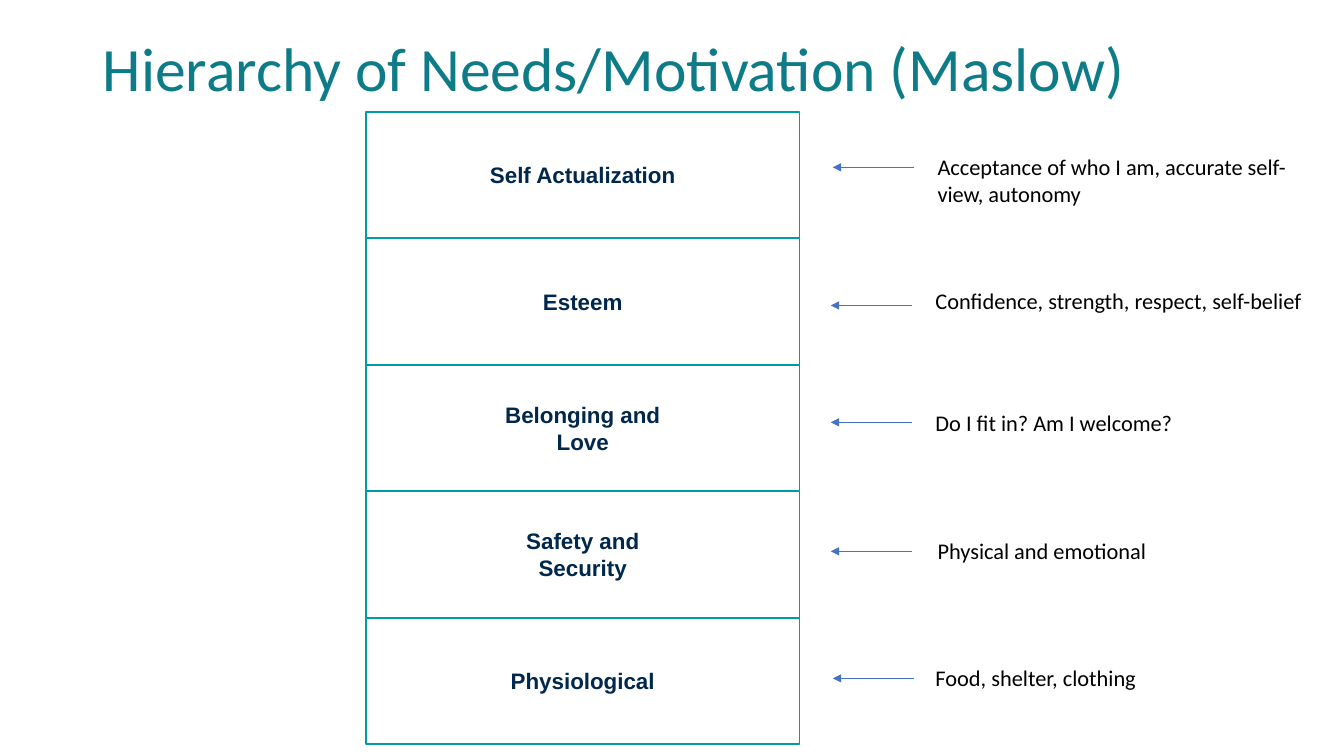
from dataclasses import dataclass

from lxml.etree import SubElement
from pptx import Presentation
from pptx.dml.color import RGBColor as Color
from pptx.enum.shapes import MSO_CONNECTOR as Connector, MSO_SHAPE as Shape
from pptx.enum.text import MSO_ANCHOR as Anchor, MSO_AUTO_SIZE as AutoSize, PP_ALIGN as Align
from pptx.oxml.ns import qn
from pptx.util import Inches, Pt


@dataclass(frozen=True)
class Theme:
    title_color: str = "0E7C88"
    level_line: str = "009CA6"
    level_text: str = "00274C"
    arrow: str = "4472C4"
    note_text: str = "000000"
    title_size: int = 44
    body_size: int = 16
    line_width: int = 1
    heading_font: str = "Calibri"
    level_font: str = "Arial"


def write_text(frame, text, *, font, size, color, bold=False, align=Align.LEFT,
               anchor=Anchor.TOP, spacing=1.0, margins=(0.1, 0.05)):
    frame.word_wrap = True
    frame.vertical_anchor = anchor
    frame.margin_left = frame.margin_right = Inches(margins[0])
    frame.margin_top = frame.margin_bottom = Inches(margins[1])
    para = frame.paragraphs[0]
    para.alignment = align
    para.line_spacing = spacing
    span = para.add_run()
    span.text = text
    span.font.name = font
    span.font.size = Pt(size)
    span.font.bold = bold
    span.font.color.rgb = Color.from_string(color)


class PageBuilder:
    def __init__(self, page, theme):
        self.page = page
        self.theme = theme

    def title(self, text, left, top, width, height):
        box = self.page.shapes.add_textbox(*map(Inches, (left, top, width, height)))
        write_text(box.text_frame, text, font=self.theme.heading_font,
                   size=self.theme.title_size, color=self.theme.title_color,
                   anchor=Anchor.MIDDLE, spacing=0.9)

    def level(self, text, left, top, width, height):
        box = self.page.shapes.add_shape(
            Shape.RECTANGLE, *map(Inches, (left, top, width, height)))
        box.shadow.inherit = False
        box.fill.background()
        box.line.color.rgb = Color.from_string(self.theme.level_line)
        box.line.width = Pt(self.theme.line_width)
        write_text(box.text_frame, text, font=self.theme.level_font,
                   size=self.theme.body_size, color=self.theme.level_text, bold=True,
                   align=Align.CENTER, anchor=Anchor.MIDDLE, margins=(1.22, 0.03))

    def arrow(self, tip, y, length):
        line = self.page.shapes.add_connector(
            Connector.STRAIGHT, *map(Inches, (tip + length, y, tip, y)))
        line.line.color.rgb = Color.from_string(self.theme.arrow)
        line.line.width = Pt(self.theme.line_width)
        SubElement(line.line._get_or_add_ln(), qn("a:tailEnd"), type="triangle")
        SubElement(line._element.spPr, qn("a:effectLst"))

    def note(self, text, left, top, width, height):
        box = self.page.shapes.add_textbox(*map(Inches, (left, top, width, height)))
        write_text(box.text_frame, text, font=self.theme.heading_font,
                   size=self.theme.body_size, color=self.theme.note_text)
        box.text_frame.auto_size = AutoSize.SHAPE_TO_FIT_TEXT


LEVEL_LEFT, LEVEL_TOP, LEVEL_WIDTH, LEVEL_HEIGHT = 3.63, 1.11, 4.3, 1.25
LEVEL_COUNT = 5
LAST_LEVEL_TOP = 6.13
LEVEL_PITCH = (LAST_LEVEL_TOP - LEVEL_TOP) / (LEVEL_COUNT - 1)
ARROW_LENGTH = 0.81

NEEDS = [
    ("Self Actualization", (8.26, 1.66),
     "Acceptance of who I am, accurate self-view, autonomy", (9.2, 1.47, 3.98, 0.64)),
    ("Esteem", (8.24, 3.03),
     "Confidence, strength, respect, self-belief", (9.18, 2.8, 3.98, 0.37)),
    ("Belonging and Love", (8.24, 4.19),
     "Do I fit in? Am I welcome?", (9.18, 4.01, 2.59, 0.37)),
    ("Safety and Security", (8.24, 5.47),
     "Physical and emotional", (9.2, 5.28, 2.32, 0.37)),
    ("Physiological", (8.26, 6.73),
     "Food, shelter, clothing", (9.18, 6.54, 2.32, 0.37)),
]


def main():
    deck = Presentation()
    deck.slide_width, deck.slide_height = Inches(13.33), Inches(7.5)
    builder = PageBuilder(deck.slides.add_slide(deck.slide_layouts[6]), Theme())
    builder.title("Hierarchy of Needs/Motivation (Maslow)", 0.92, -0.02, 11.5, 1.45)
    for index, (need, arrow_tip, note, note_place) in enumerate(NEEDS):
        builder.level(need, LEVEL_LEFT, LEVEL_TOP + index * LEVEL_PITCH,
                      LEVEL_WIDTH, LEVEL_HEIGHT)
        builder.arrow(*arrow_tip, ARROW_LENGTH)
        builder.note(note, *note_place)
    deck.save("out.pptx")


if __name__ == "__main__":
    main()
